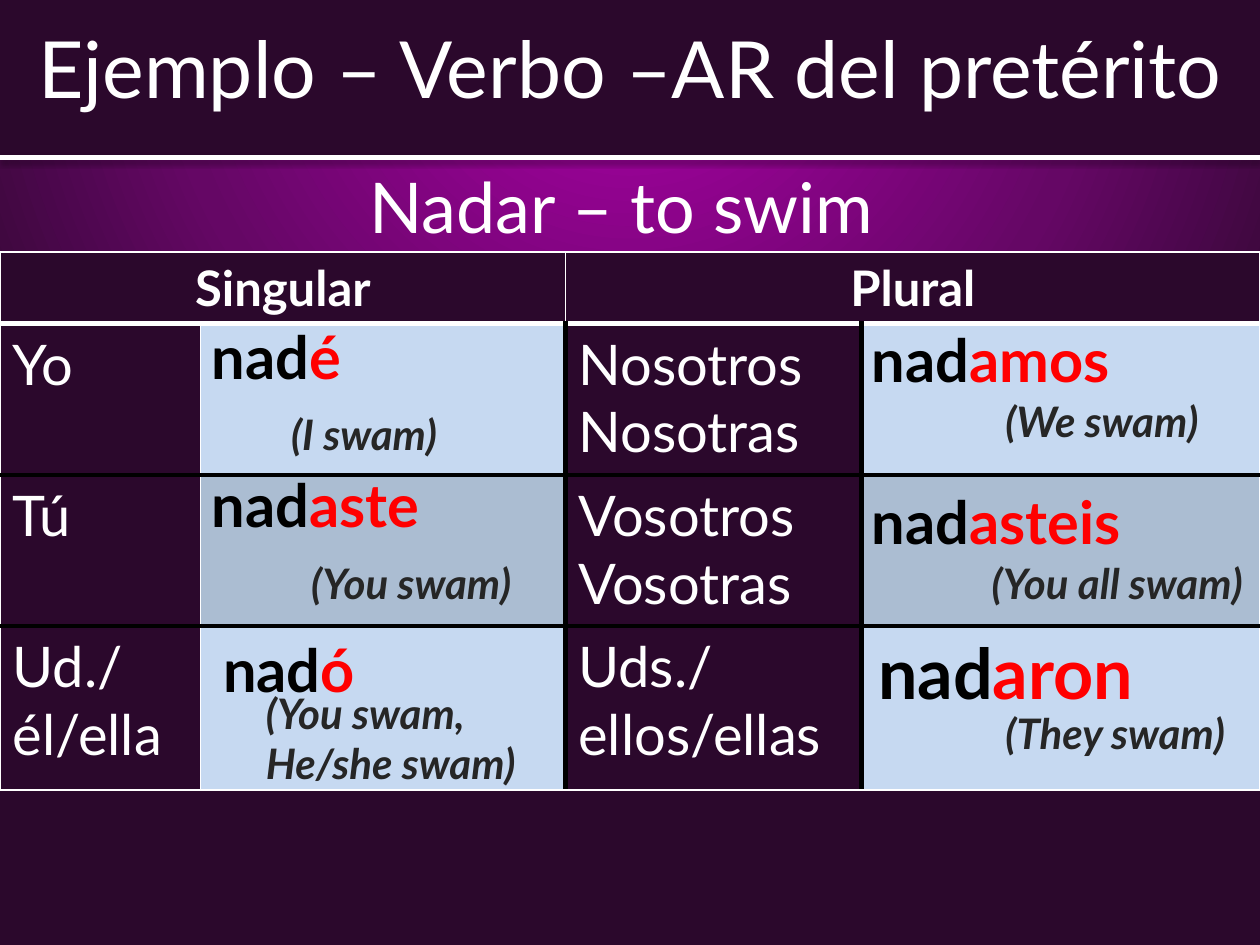
from pptx import Presentation
from pptx.dml.color import RGBColor
from pptx.enum.shapes import MSO_CONNECTOR as CONNECTOR, MSO_SHAPE as SHAPE
from pptx.enum.text import MSO_ANCHOR as ANCHOR, PP_ALIGN as ALIGN
from pptx.oxml import parse_xml
from pptx.util import Inches, Pt

WHITE = RGBColor(0xFF, 0xFF, 0xFF)
BLACK = RGBColor(0, 0, 0)
RED = RGBColor(0xFF, 0, 0)
GRAY = RGBColor(0x26, 0x26, 0x26)
PLUM = RGBColor(0x2B, 0x08, 0x2C)
PURPLE = RGBColor(0x65, 0x07, 0x65)
MAGENTA = RGBColor(0xAE, 0, 0xAB)
LIGHT_BLUE = RGBColor(0xC6, 0xD9, 0xF1)
DARK_BLUE = RGBColor(0xAB, 0xBD, 0xD2)
NS = 'xmlns:a="http://schemas.openxmlformats.org/drawingml/2006/main"'
NO_STYLE = "{2D5ABB26-0587-4C30-8999-92F81FD0307C}"


def add_run(p, text, size, color, bold=False, italic=False):
    r = p.add_run()
    r.text = text
    r.font.name = "Lato"
    r.font.size = Pt(size)
    r.font.color.rgb = color
    r.font.bold = bold
    r.font.italic = italic


def add_plain_table(left, top, widths, heights):
    """Add a table without any style and return it."""
    table = slide.shapes.add_table(
        len(heights), len(widths), Inches(left), Inches(top),
        Inches(sum(widths)), Inches(sum(heights))).table
    table._tbl.tblPr[0].text = NO_STYLE
    table.first_row = table.horz_banding = False
    for column, width in zip(table.columns, widths):
        column.width = Inches(width)
    for row, height in zip(table.rows, heights):
        row.height = Inches(height)
    return table


prs = Presentation()
prs.slide_width, prs.slide_height = Inches(10), Inches(7.5)
slide = prs.slides.add_slide(prs.slide_layouts[6])

# Background: radial gradient centred above the slide
fill = slide.background.fill
fill.solid()
fill.fore_color.rgb = PLUM
solid = slide.background._cSld.bg.bgPr[0]
stops = "".join(
    f'<a:gs pos="{pos}000"><a:srgbClr val="{color}"/></a:gs>'
    for pos, color in ((0, MAGENTA), (59, PURPLE), (100, PLUM)))
solid.getparent().replace(solid, parse_xml(
    f'<a:gradFill {NS} rotWithShape="1"><a:gsLst>{stops}</a:gsLst>'
    '<a:path path="circle"><a:fillToRect l="50000" t="-80000" r="50000" '
    'b="180000"/></a:path></a:gradFill>'))

# Title band, verb and divider
band = slide.shapes.add_shape(SHAPE.RECTANGLE, 0, 0, Inches(10), Inches(1.25))
band.shadow.inherit = False
band.fill.solid()
band.fill.fore_color.rgb = PLUM
band.line.fill.background()

for text, top, height, size, anchor in (
        ("Nadar – to swim ", 1.25, 5.2, 40, ANCHOR.TOP),
        ("Ejemplo – Verbo –AR del pretérito", 0, 1.06, 45, ANCHOR.MIDDLE)):
    box = slide.shapes.add_textbox(0, Inches(top), Inches(10), Inches(height))
    tf = box.text_frame
    tf.word_wrap = True
    tf.vertical_anchor = anchor
    tf.paragraphs[0].alignment = ALIGN.CENTER
    add_run(tf.paragraphs[0], text, size, WHITE)

divider = slide.shapes.add_connector(
    CONNECTOR.STRAIGHT, 0, Inches(1.25), Inches(10), Inches(1.25))
divider.line.color.rgb = WHITE
divider.line.width = Pt(3)
divider._element.spPr.append(parse_xml(
    f'<a:effectLst {NS}><a:outerShdw blurRad="39370" dist="20320" '
    'dir="5400000"><a:srgbClr val="000000"><a:alpha val="38000"/>'
    '</a:srgbClr></a:outerShdw></a:effectLst>'))

# Conjugation grid
pronouns = [
    (["Yo"], ["Nosotros", "Nosotras"]),
    (["Tú"], ["Vosotros", "Vosotras"]),
    (["Ud./él/ella"], ["Uds./ellos/ellas"]),
]
grid = add_plain_table(0, 2, [1.59, 2.9, 2.35, 3.16], [0.57, 1.2, 1.2, 1.3])
for col, heading in ((0, "Singular"), (2, "Plural")):
    cell = grid.cell(0, col)
    cell.merge(grid.cell(0, col + 1))
    p = cell.text_frame.paragraphs[0]
    p.alignment = ALIGN.CENTER
    add_run(p, heading, 28, WHITE, bold=True)

for row, pair in enumerate(pronouns, 1):
    for col, lines in zip((0, 2), pair):
        tf = grid.cell(row, col).text_frame
        for i, line in enumerate(lines):
            p = tf.add_paragraph() if i else tf.paragraphs[0]
            add_run(p, line, 32, WHITE)

thin, thick, rule = (WHITE, 1), (WHITE, 3), (BLACK, 3)
across = [thin, thick, rule, rule, thin]
down = [thin, thin, rule, rule, thin]
for row in range(4):
    for col in range(4):
        cell = grid.cell(row, col)
        cell.fill.solid()
        if row == 0 or col % 2 == 0:
            cell.fill.fore_color.rgb = PLUM
        else:
            cell.fill.fore_color.rgb = DARK_BLUE if row == 2 else LIGHT_BLUE
        left, right = (thin, thin) if row == 0 else down[col:col + 2]
        edges = zip("LRTB", (left, right, across[row], across[row + 1]))
        for i, (side, (color, width)) in enumerate(edges):
            cell._tc.tcPr.insert(i, parse_xml(
                f'<a:ln{side} {NS} w="{Pt(width)}"><a:solidFill>'
                f'<a:srgbClr val="{color}"/></a:solidFill></a:ln{side}>'))

# Verb forms: ending, left, top, width, height, size
forms = [
    ("é", 1.58, 2.5, 2.81, 0.67, 34),
    ("aste", 1.58, 3.67, 2.97, 0.67, 34),
    ("ó", 1.67, 4.98, 2.73, 0.67, 34),
    ("amos", 6.82, 2.52, 3.31, 0.68, 34),
    ("asteis", 6.82, 3.81, 2.52, 0.67, 34),
    ("aron", 6.87, 4.95, 3.07, 0.77, 40),
]
for ending, left, top, width, height, size in forms:
    table = add_plain_table(left, top, [width], [height])
    p = table.cell(0, 0).text_frame.paragraphs[0]
    add_run(p, "nad", size, BLACK, bold=True)
    add_run(p, ending, size, RED, bold=True)

# Translations: text, left, top, width, height
translations = [
    ("(I swam)", 2.21, 3.2, 1.76, 0.5),
    ("(You swam)", 2.37, 4.38, 2.02, 0.5),
    ("(You swam, He/she swam)", 2.01, 5.41, 2.39, 0.9),
    ("(We swam)", 7.88, 3.09, 2.07, 0.5),
    ("(You all swam)", 7.77, 4.38, 2.42, 0.5),
    ("(They swam)", 7.88, 5.57, 2.36, 0.5),
]
for text, left, top, width, height in translations:
    table = add_plain_table(left, top, [width], [height])
    p = table.cell(0, 0).text_frame.paragraphs[0]
    add_run(p, text, 24, GRAY, bold=True, italic=True)

prs.save("out.pptx")
